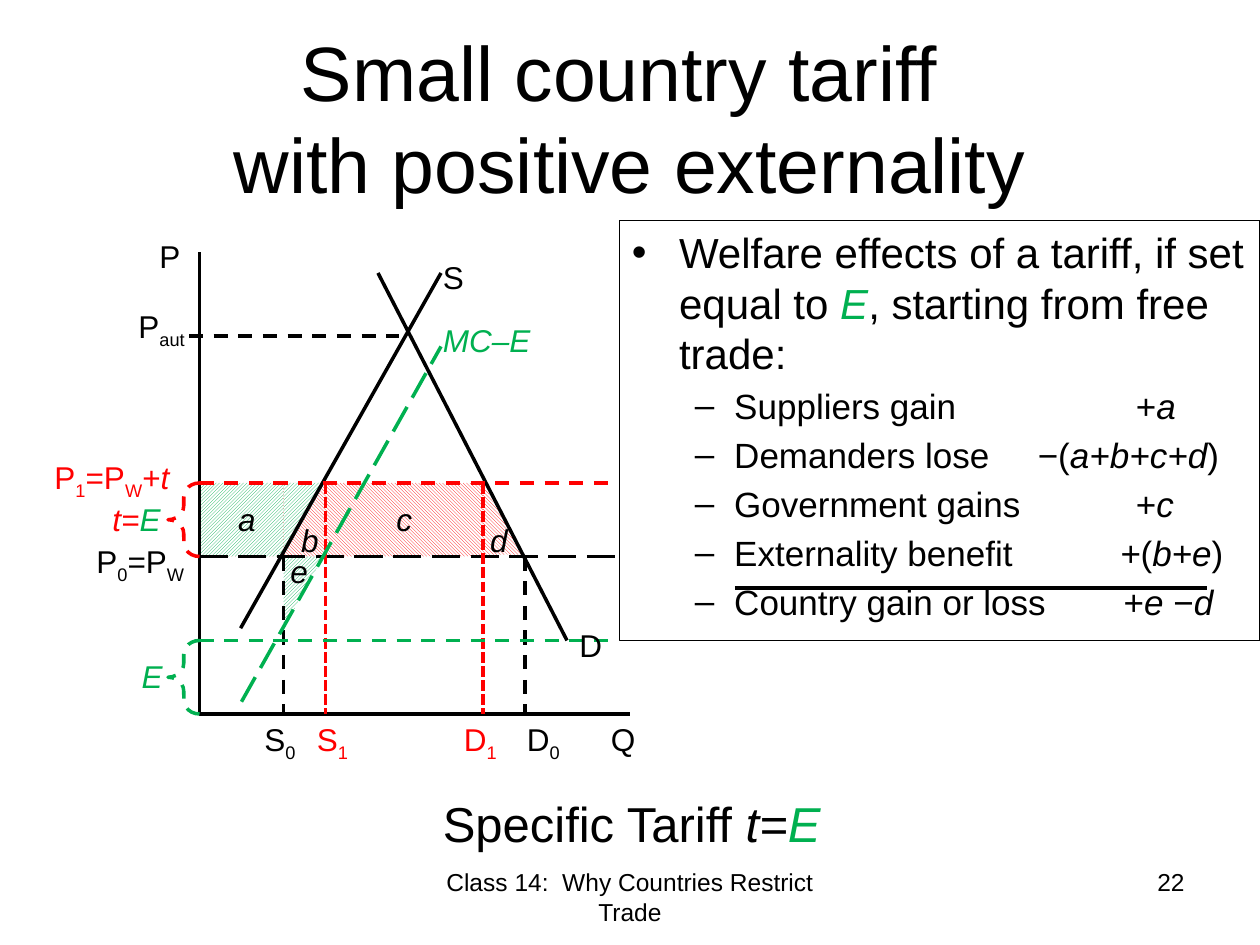
import pptx
import pptx.dml.color
import pptx.enum.dml
import pptx.enum.shapes
import pptx.enum.text
import pptx.oxml.ns
import pptx.util
from lxml import etree

Pt = pptx.util.Pt
SHAPE = pptx.enum.shapes.MSO_SHAPE
DASH = pptx.enum.dml.MSO_LINE
PATTERN = pptx.enum.dml.MSO_PATTERN
ALIGN = pptx.enum.text.PP_ALIGN
BLACK, RED, GREEN, WHITE = "000000", "FF0000", "00B050", "FFFFFF"
AXIS, BASE, WORLD, TARIFF, EXTERNAL = 114, 408, 318, 276, 366
S0, S1, D1, D0 = 162, 186, 276, 300


def rgb(value):
    """Return the colour for a hex string."""
    return pptx.dml.color.RGBColor.from_string(value)


def add_child(parent, tag, **attributes):
    """Append a DrawingML element to a parent element."""
    return etree.SubElement(parent, pptx.oxml.ns.qn(tag), attributes)


def format_span(span, size, colour, marks=""):
    """Style a run; in marks, i is italic and _ is subscript."""
    span.font.name = "Arial"
    span.font.size = Pt(size)
    span.font.italic = "i" in marks
    span.font.color.rgb = rgb(colour)
    if "_" in marks:
        span.font._element.set("baseline", "-25000")


def write(para, pieces, size, colour):
    """Fill a paragraph with pieces of (text, optional marks, optional colour)."""
    for text, *style in pieces:
        span = para.add_run()
        span.text = text
        marks = style[0] if style else ""
        format_span(span, size, style[1] if len(style) > 1 else colour, marks)


def add_text(page, place, pieces, colour=BLACK, size=18, align=ALIGN.LEFT, wrap=True):
    """Add a text box holding one paragraph."""
    box = page.shapes.add_textbox(*map(Pt, place))
    box.text_frame.word_wrap = wrap
    para = box.text_frame.paragraphs[0]
    para.alignment = align
    write(para, pieces, size, colour)


def add_title(page):
    """Add the two-line title."""
    box = page.shapes.add_textbox(Pt(36), Pt(21.6), Pt(648), Pt(90))
    box.text_frame.word_wrap = True
    box.text_frame.vertical_anchor = pptx.enum.text.MSO_ANCHOR.MIDDLE
    para = box.text_frame.paragraphs[0]
    para.text = "Small country tariff \vwith positive externality"
    para.alignment = ALIGN.CENTER
    for span in para.runs:
        format_span(span, 44, BLACK)


def add_line(page, start, end, colour=BLACK, dash=None):
    """Add a straight line between two points."""
    line = page.shapes.add_connector(
        pptx.enum.shapes.MSO_CONNECTOR.STRAIGHT, *map(Pt, (*start, *end)))
    line.line.color.rgb = rgb(colour)
    line.line.width = Pt(2)
    if dash:
        line.line.dash_style = dash
    add_child(line._element.spPr, "a:effectLst")


def add_area(page, kind, place, colour, pattern, flipped=False):
    """Add a hatched welfare area."""
    area = page.shapes.add_shape(kind, *map(Pt, place))
    area.shadow.inherit = False
    area.line.fill.background()
    area.fill.patterned()
    area.fill.pattern = pattern
    area.fill.fore_color.rgb = rgb(colour)
    area.fill.back_color.rgb = rgb(WHITE)
    if flipped:
        area._element.spPr.xfrm.set("flipV", "1")


def add_brace(page, top, colour):
    """Add a dashed brace left of the price axis."""
    brace = page.shapes.add_shape(SHAPE.LEFT_BRACE, Pt(96), Pt(top), Pt(18), Pt(42))
    brace.shadow.inherit = False
    brace.adjustments[0] = 0.44
    brace.fill.background()
    brace.line.color.rgb = rgb(colour)
    brace.line.width = Pt(2)
    brace.line.dash_style = DASH.DASH


def add_bullet(para, mark, margin, hang, space, tab=None):
    """Give a paragraph a hanging bullet and an optional tab stop."""
    para.space_before = Pt(space)
    properties = para._element.get_or_add_pPr()
    properties.set("marL", str(Pt(margin)))
    properties.set("indent", str(Pt(-hang)))
    add_child(properties, "a:buFont", typeface="Arial")
    add_child(properties, "a:buChar", char=mark)
    if tab:
        stops = add_child(properties, "a:tabLst")
        add_child(stops, "a:tab", pos=str(Pt(tab)), algn="l")


def add_welfare_list(page):
    """Add the framed list of welfare effects."""
    box = page.shapes.add_textbox(Pt(354), Pt(126), Pt(366), Pt(240))
    box.line.color.rgb = rgb(BLACK)
    box.line.width = Pt(0.75)
    frame = box.text_frame
    frame.word_wrap = True
    add_bullet(frame.paragraphs[0], "•", 27, 27, 5)
    write(frame.paragraphs[0], [("Welfare effects of a tariff, if set equal to ",), ("E", "i", GREEN),
                                (", starting from free trade:",)], 24, BLACK)
    effects = [
        ("Suppliers gain", 288, [("+",), ("a", "i")]),
        ("Demanders lose", 232, [("−(",), ("a+b+c+d", "i"), (")",)]),
        ("Government gains", 288, [("+",), ("c", "i")]),
        ("Externality benefit", 279, [("+", "i"), ("(",), ("b+e", "i"), (")",)]),
        ("Country gain or loss", 281, [("+",), ("e ", "i"), ("−",), ("d", "i")]),
    ]
    for name, tab, amount in effects:
        para = frame.add_paragraph()
        para.level = 1
        add_bullet(para, "–", 58.5, 22.5, 4, tab)
        write(para, [(name + "\t",), *amount], 20, BLACK)
    add_line(page, (420, 336), (690, 336))


def add_areas(page):
    """Add the hatched areas between the prices and curves."""
    up, down = PATTERN.DARK_UPWARD_DIAGONAL, PATTERN.DARK_DOWNWARD_DIAGONAL
    height = WORLD - TARIFF
    add_area(page, SHAPE.RIGHT_TRIANGLE, (S0, WORLD, 23, 41), GREEN, up, True)
    add_area(page, SHAPE.RECTANGLE, (AXIS, TARIFF, D1 - AXIS, height), RED, down)
    add_area(page, SHAPE.RIGHT_TRIANGLE, (D1, TARIFF, 22.5, 41), RED, down)
    add_area(page, SHAPE.RECTANGLE, (AXIS, TARIFF, S0 - AXIS, height), GREEN, up)
    add_area(page, SHAPE.RIGHT_TRIANGLE, (S0, TARIFF, 23, 41), GREEN, up, True)


def add_curves(page):
    """Add the axes, curves, price lines and quantity lines."""
    for start, end in [((AXIS, BASE), (360, BASE)), ((AXIS, BASE), (AXIS, 144)),
                       ((137.5, 359), (252, 156)), ((324, EXTERNAL), (216, 156))]:
        add_line(page, start, end)
    add_line(page, (AXIS, WORLD), (354, WORLD), BLACK, DASH.LONG_DASH)
    for quantity in (D0, S0):
        add_line(page, (quantity, WORLD), (quantity, BASE), BLACK, DASH.DASH)
    add_line(page, (AXIS, TARIFF), (348, TARIFF), RED, DASH.DASH)
    for quantity in (S1, D1):
        add_line(page, (quantity, TARIFF), (quantity, BASE), RED, DASH.SQUARE_DOT)
    add_line(page, (108, 192), (228, 192), BLACK, DASH.DASH)
    add_line(page, (AXIS, EXTERNAL), (348, EXTERNAL), GREEN, DASH.DASH)
    add_line(page, (138, 401), (252, 198), GREEN, DASH.LONG_DASH)
    add_brace(page, TARIFF, RED)
    add_brace(page, EXTERNAL, GREEN)


def add_labels(page):
    """Add the names of curves, prices, quantities and areas."""
    labels = [
        (84, 132, 54, BLACK, [("P",)]),
        (246, 144, 54, BLACK, [("S",)]),
        (48, 306, 72, BLACK, [("P",), ("0", "_"), ("=P",), ("W", "_")]),
        (324, 354, 30, BLACK, [("D",)]),
        (342, BASE, 54, BLACK, [("Q",)]),
        (144, BASE, 36, BLACK, [("S",), ("0", "_")]),
        (174, BASE, 36, RED, [("S",), ("1", "_")]),
        (258, BASE, 36, RED, [("D",), ("1", "_")]),
        (294, BASE, 36, BLACK, [("D",), ("0", "_")]),
        (24, 258, 90, RED, [("P",), ("1", "_"), ("=P",), ("W", "_"), ("+",), ("t", "i")]),
        (72, 172, 54, BLACK, [("P",), ("aut", "_")]),
        (246, 180, 78, GREEN, [("MC–E", "i")]),
    ]
    for left, top, width, colour, pieces in labels:
        add_text(page, (left, top, width, 29), pieces, colour)
    areas = [("a", 114, 282), ("b", 150, 294), ("c", 204, 282), ("d", 258, 294), ("e", 144, 312)]
    for name, left, top in areas:
        add_text(page, (left, top, 54, 29), [(name, "i")], align=ALIGN.CENTER)
    add_text(page, (42, 282, 72, 29), [("t=", "i"), ("E", "i", GREEN)], RED, align=ALIGN.CENTER)
    add_text(page, (66, 372, 42, 29), [("E", "i")], GREEN, align=ALIGN.CENTER)


def main():
    """Build the tariff slide and save it."""
    deck = pptx.Presentation()
    deck.slide_width, deck.slide_height = Pt(720), Pt(540)
    page = deck.slides.add_slide(deck.slide_layouts[6])
    add_areas(page)
    add_title(page)
    add_welfare_list(page)
    add_curves(page)
    add_labels(page)
    add_text(page, (246, 450, 232.5, 75), [("Specific Tariff ",), ("t=", "i"), ("E", "i", GREEN)],
             size=28, wrap=False)
    add_text(page, (246, 492, 228, 37.5), [("Class 14:  Why Countries Restrict Trade",)],
             size=14, align=ALIGN.CENTER)
    add_text(page, (516, 492, 168, 37.5), [("22",)], size=14, align=ALIGN.RIGHT)
    deck.save("out.pptx")


if __name__ == "__main__":
    main()
